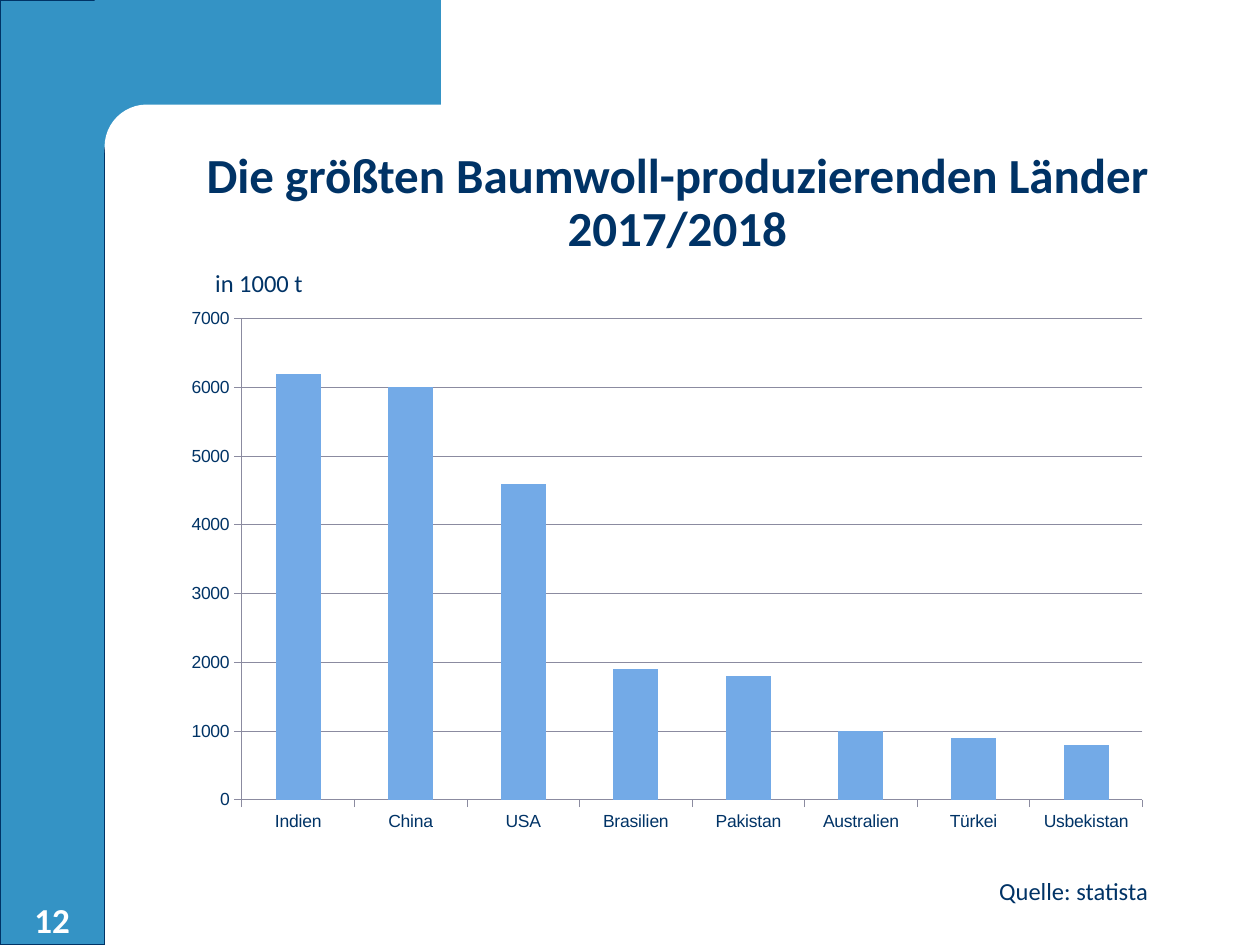
from dataclasses import dataclass

from lxml.etree import SubElement
from pptx import Presentation
from pptx.chart.data import CategoryChartData
from pptx.dml.color import RGBColor
from pptx.enum.chart import XL_CHART_TYPE, XL_TICK_MARK
from pptx.enum.shapes import MSO_SHAPE
from pptx.enum.text import MSO_ANCHOR, MSO_AUTO_SIZE, PP_ALIGN
from pptx.oxml.ns import qn
from pptx.util import Inches, Pt


@dataclass(frozen=True)
class Theme:
    navy: RGBColor = RGBColor.from_string("003366")
    blue: RGBColor = RGBColor.from_string("3493C5")
    bar: RGBColor = RGBColor.from_string("73AAE7")
    grid: RGBColor = RGBColor.from_string("8B8BA0")
    white: RGBColor = RGBColor.from_string("FFFFFF")
    text: str = "Calibri"
    label: str = "Arial"
    head: Pt = Pt(28)
    page: Pt = Pt(20)
    note: Pt = Pt(14)
    tick: Pt = Pt(10)
    edge: Pt = Pt(0.75)
    hair: Pt = Pt(0.5)


LOOK = Theme()
CROPS = {
    "Indien": 6200, "China": 6000, "USA": 4600, "Brasilien": 1900,
    "Pakistan": 1800, "Australien": 1000, "Türkei": 900, "Usbekistan": 800,
}


def apply(item, form):
    for name, value in form.items():
        setattr(item, name, value)


def place(item, box):
    sides = ("left", "top", "width", "height")
    apply(item, dict(zip(sides, map(Inches, box))))


def write(shape, words, size, align, anchor, color=LOOK.navy, bold=False, wrap=True):
    frame = shape.text_frame
    apply(frame, {"word_wrap": wrap, "auto_size": MSO_AUTO_SIZE.NONE,
                  "vertical_anchor": anchor})
    para = frame.paragraphs[0]
    para.alignment = align
    run = para.add_run()
    run.text = words
    apply(run.font, {"name": LOOK.text, "size": size, "bold": bold})
    run.font.color.rgb = color
    return para


def label(slide, box, words, size, align, **form):
    shape = slide.shapes.add_textbox(*map(Inches, box))
    write(shape, words, size, align, **form)


def block(slide, kind, box, color):
    shape = slide.shapes.add_shape(kind, *map(Inches, box))
    shape.shadow.inherit = False
    shape.fill.solid()
    shape.fill.fore_color.rgb = color
    shape.line.fill.background()
    return shape


def frame(slide, box):
    left, top, width, height = box
    side = block(slide, MSO_SHAPE.RECTANGLE, (left, top, 0.83, height), LOOK.blue)
    side.line.color.rgb = LOOK.navy
    side.line.width = LOOK.edge
    block(slide, MSO_SHAPE.RECTANGLE, (left + 0.75, top, 2.75, 1.17), LOOK.blue)
    curve = block(slide, MSO_SHAPE.ROUNDED_RECTANGLE,
                  (left + 0.83, top + 0.83, 5.58, 0.67), LOOK.white)
    curve.adjustments[0] = 0.5
    label(slide, (left, top + height - 0.43, 0.83, 0.44), "12", LOOK.page,
          PP_ALIGN.CENTER, anchor=MSO_ANCHOR.BOTTOM, color=LOOK.white, bold=True)


def title(slide, box):
    head = slide.shapes.title
    slide.shapes.element.append(head.element)
    place(head, box)
    para = write(head, "Die größten Baumwoll-produzierenden Länder 2017/2018",
                 LOOK.head, PP_ALIGN.CENTER, MSO_ANCHOR.BOTTOM, bold=True)
    para.line_spacing = 0.9


def layout(chart, box):
    area = chart._chartSpace.chart.plotArea
    for old in area.findall(qn("c:layout")):
        area.remove(old)
    node = SubElement(area, qn("c:layout"))
    area.insert(0, node)
    hand = SubElement(node, qn("c:manualLayout"))
    rules = [("layoutTarget", "inner"), ("xMode", "edge"), ("yMode", "edge")]
    for name, value in rules + list(zip("xywh", box)):
        SubElement(hand, qn(f"c:{name}")).set("val", str(value))


def graph(slide, box):
    left, top, width, height = box
    data = CategoryChartData(number_format="General")
    data.categories = list(CROPS)
    data.add_series("Series 1", list(CROPS.values()))
    chart = slide.shapes.add_chart(
        XL_CHART_TYPE.COLUMN_CLUSTERED, *map(Inches, box), data).chart
    apply(chart, {"has_legend": False, "has_title": False})
    apply(chart.font, {"name": LOOK.label, "size": LOOK.tick})
    chart.font.color.rgb = LOOK.navy
    plot = chart.plots[0]
    apply(plot, {"gap_width": 150, "vary_by_categories": False})
    fill = plot.series[0].format.fill
    fill.solid()
    fill.fore_color.rgb = LOOK.bar
    apply(chart.value_axis, {"minimum_scale": 0, "maximum_scale": 7000,
                             "major_unit": 1000, "has_major_gridlines": True})
    chart.category_axis.has_major_gridlines = False
    for axis in (chart.category_axis, chart.value_axis):
        apply(axis, {"major_tick_mark": XL_TICK_MARK.OUTSIDE,
                     "minor_tick_mark": XL_TICK_MARK.NONE})
    for part in (chart.category_axis, chart.value_axis,
                 chart.value_axis.major_gridlines):
        part.format.line.color.rgb = LOOK.grid
        part.format.line.width = LOOK.hair
    layout(chart, (0.083, 0.023, 0.899, 0.882))
    label(slide, (left + 0.35, top - 0.35, 0.9, 0.34), "in 1000 t",
          LOOK.note, PP_ALIGN.LEFT, anchor=MSO_ANCHOR.TOP, wrap=False)
    label(slide, (left + width - 1.53, top + height + 0.14, 1.53, 0.33),
          "Quelle: statista", LOOK.note, PP_ALIGN.RIGHT, anchor=MSO_ANCHOR.TOP)


def main():
    deck = Presentation()
    apply(deck, {"slide_width": Inches(10), "slide_height": Inches(7.5)})
    slide = deck.slides.add_slide(deck.slide_layouts[5])
    frame(slide, (0, 0, 10, 7.5))
    title(slide, (1, 1.39, 8.75, 0.7))
    graph(slide, (1.26, 2.43, 7.95, 4.33))
    deck.save("out.pptx")


if __name__ == "__main__":
    main()
